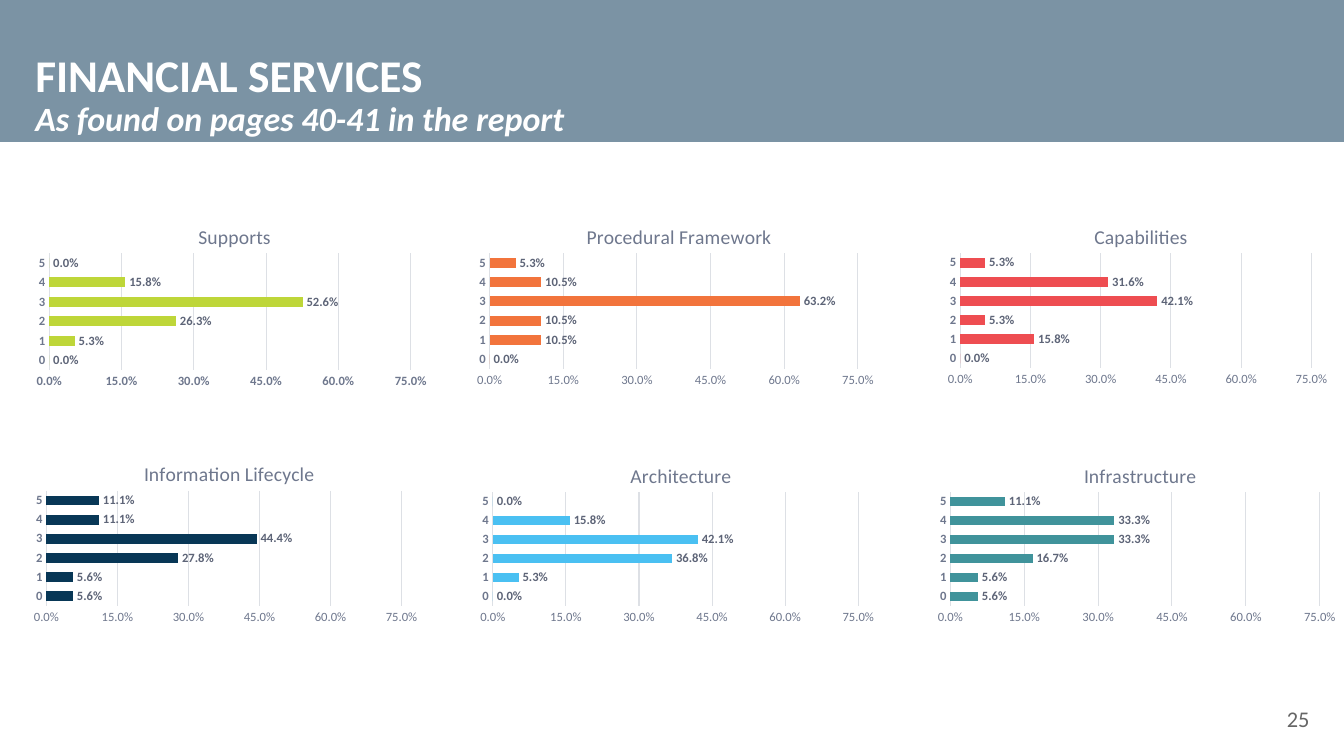
import dataclasses

import pptx
import pptx.chart.data
import pptx.dml.color
import pptx.enum.chart
import pptx.enum.shapes
import pptx.enum.text
import pptx.oxml
import pptx.oxml.ns
import pptx.util

Cm = pptx.util.Cm
Pt = pptx.util.Pt
qn = pptx.oxml.ns.qn


def rgb(value):
    return pptx.dml.color.RGBColor.from_string(value)


@dataclasses.dataclass(frozen=True)
class Theme:
    font: str = "Calibri"
    band: str = "7B93A4"
    white: str = "FFFFFF"
    page: str = "666666"
    axis: str = "6E778D"
    label: str = "5D6477"
    grid: str = "DDE0E5"
    base: str = "31353F"
    title_size: float = 32.4
    subtitle_size: float = 24.3
    page_size: float = 16
    chart_title_size: float = 14
    chart_size: float = 10
    axis_size: float = 9


THEME = Theme()

CATEGORIES = ["0", "1", "2", "3", "4", "5"]

# title, title width, box (left, top, width, height), colour, values, bold scale
CHARTS = [
    ("Supports", 1.84, (0.71, 5.16, 10.24, 4.75), "BED639",
     [0, 0.053, 0.263, 0.526, 0.158, 0], True),
    ("Procedural Framework", 4.64, (11.81, 5.16, 10.41, 4.72), "F2743C",
     [0, 0.105, 0.105, 0.632, 0.105, 0.053], False),
    ("Capabilities", 2.34, (23.67, 5.16, 9.98, 4.7), "EE4D51",
     [0, 0.158, 0.053, 0.421, 0.316, 0.053], False),
    ("Information Lifecycle", 4.28, (0.64, 11.15, 10.08, 4.7), "083756",
     [0.056, 0.056, 0.278, 0.444, 0.111, 0.111], False),
    ("Architecture", 2.52, (11.89, 11.18, 10.34, 4.67), "4AC0F2",
     [0, 0.053, 0.368, 0.421, 0.158, 0], False),
    ("Infrastructure", 2.82, (23.42, 11.18, 10.44, 4.67), "40939B",
     [0.056, 0.056, 0.167, 0.333, 0.333, 0.111], False),
]


def apply(obj, values):
    for name, value in values.items():
        setattr(obj, name, value)


def style_font(font, size, color, bold=False, italic=False):
    apply(font, {"name": THEME.font, "size": Pt(size), "bold": bold, "italic": italic})
    font.color.rgb = rgb(color)


def style_line(line):
    line.color.rgb = rgb(THEME.grid)
    line.width = Pt(0.75)


def add_band(slide):
    sp = slide.shapes.add_shape(
        pptx.enum.shapes.MSO_SHAPE.RECTANGLE, 0, 0, Cm(33.87), Cm(3.58))
    sp.shadow.inherit = False
    sp.fill.solid()
    sp.fill.fore_color.rgb = rgb(THEME.band)
    sp.line.fill.background()


def add_text(slide, box, runs, align, spacing=1.0):
    tf = slide.shapes.add_textbox(*map(Cm, box)).text_frame
    apply(tf, {"word_wrap": True,
               "vertical_anchor": pptx.enum.text.MSO_ANCHOR.MIDDLE})
    p = tf.paragraphs[0]
    apply(p, {"alignment": align, "line_spacing": spacing})
    for i, (text, size, color, bold, italic) in enumerate(runs):
        if i:
            p.add_line_break()
        r = p.add_run()
        r.text = text
        style_font(r.font, size, color, bold, italic)


def place(parent, index, values, inner=False):
    for old in parent.findall(qn("c:layout")):
        parent.remove(old)
    target = '<c:layoutTarget val="inner"/>' if inner else ""
    modes = '<c:xMode val="edge"/><c:yMode val="edge"/>'
    sizes = "".join(f'<c:{k} val="{v:.4f}"/>' for k, v in values.items())
    parent.insert(index, pptx.oxml.parse_xml(
        f'<c:layout {pptx.oxml.ns.nsdecls("c")}><c:manualLayout>'
        f"{target}{modes}{sizes}</c:manualLayout></c:layout>"))


def style_axes(chart, bold_scale):
    none = pptx.enum.chart.XL_TICK_MARK.NONE
    cat, val = chart.category_axis, chart.value_axis
    for axis, bold in ((cat, True), (val, bold_scale)):
        apply(axis, {"major_tick_mark": none, "minor_tick_mark": none})
        style_font(axis.tick_labels.font, THEME.axis_size, THEME.axis, bold)
    apply(cat, {"has_major_gridlines": False})
    apply(val, {"minimum_scale": 0, "maximum_scale": 0.75, "major_unit": 0.15,
                "has_major_gridlines": True})
    apply(val.tick_labels, {"number_format": "0.0%", "number_format_is_linked": False})
    style_line(cat.format.line)
    style_line(val.major_gridlines.format.line)
    val.format.line.fill.background()


def style_bars(chart, color):
    plot = chart.plots[0]
    apply(plot, {"gap_width": 96, "vary_by_categories": False, "has_data_labels": True})
    fill = plot.series[0].format.fill
    fill.solid()
    fill.fore_color.rgb = rgb(color)
    labels = plot.data_labels
    apply(labels, {"show_value": True, "number_format": "0.0%",
                   "number_format_is_linked": False,
                   "position": pptx.enum.chart.XL_LABEL_POSITION.OUTSIDE_END})
    style_font(labels.font, THEME.axis_size, THEME.label, True)


def add_bar_chart(slide, title, title_width, box, color, values, bold_scale):
    data = pptx.chart.data.CategoryChartData(number_format="0.0%")
    data.categories = CATEGORIES
    data.add_series("Series 1", values)
    chart = slide.shapes.add_chart(
        pptx.enum.chart.XL_CHART_TYPE.BAR_CLUSTERED, *map(Cm, box), data).chart
    apply(chart, {"has_legend": False, "has_title": True})
    style_font(chart.font, THEME.chart_size, THEME.base)

    p = chart.chart_title.text_frame.paragraphs[0]
    r = p.add_run()
    r.text = title
    style_font(r.font, THEME.chart_title_size, THEME.axis)

    style_axes(chart, bold_scale)
    style_bars(chart, color)

    width, height = box[2:]
    place(chart.element.find(".//" + qn("c:title")), 1,
          {"x": (width - title_width) / 2 / width, "y": 0.37 / height})
    place(chart.element.find(".//" + qn("c:plotArea")), 0,
          {"x": 0.53 / width, "y": 1.22 / height,
           "w": (width - 1.13) / width, "h": (height - 1.8) / height}, inner=True)


def main():
    prs = pptx.Presentation()
    apply(prs, {"slide_width": Cm(33.87), "slide_height": Cm(19.05)})
    s = prs.slides.add_slide(prs.slide_layouts[6])
    align = pptx.enum.text.PP_ALIGN
    add_band(s)
    add_text(s, (0.64, 1.27, 26.09, 2.31), [
        ("FINANCIAL SERVICES", THEME.title_size, THEME.white, True, False),
        ("As found on pages 40-41 in the report", THEME.subtitle_size,
         THEME.white, True, True),
    ], align.LEFT, 0.9)
    add_text(s, (30.96, 17.78, 2.29, 0.66),
             [("25", THEME.page_size, THEME.page, False, False)], align.RIGHT)
    for spec in CHARTS:
        add_bar_chart(s, *spec)
    prs.save("out.pptx")


if __name__ == "__main__":
    main()
